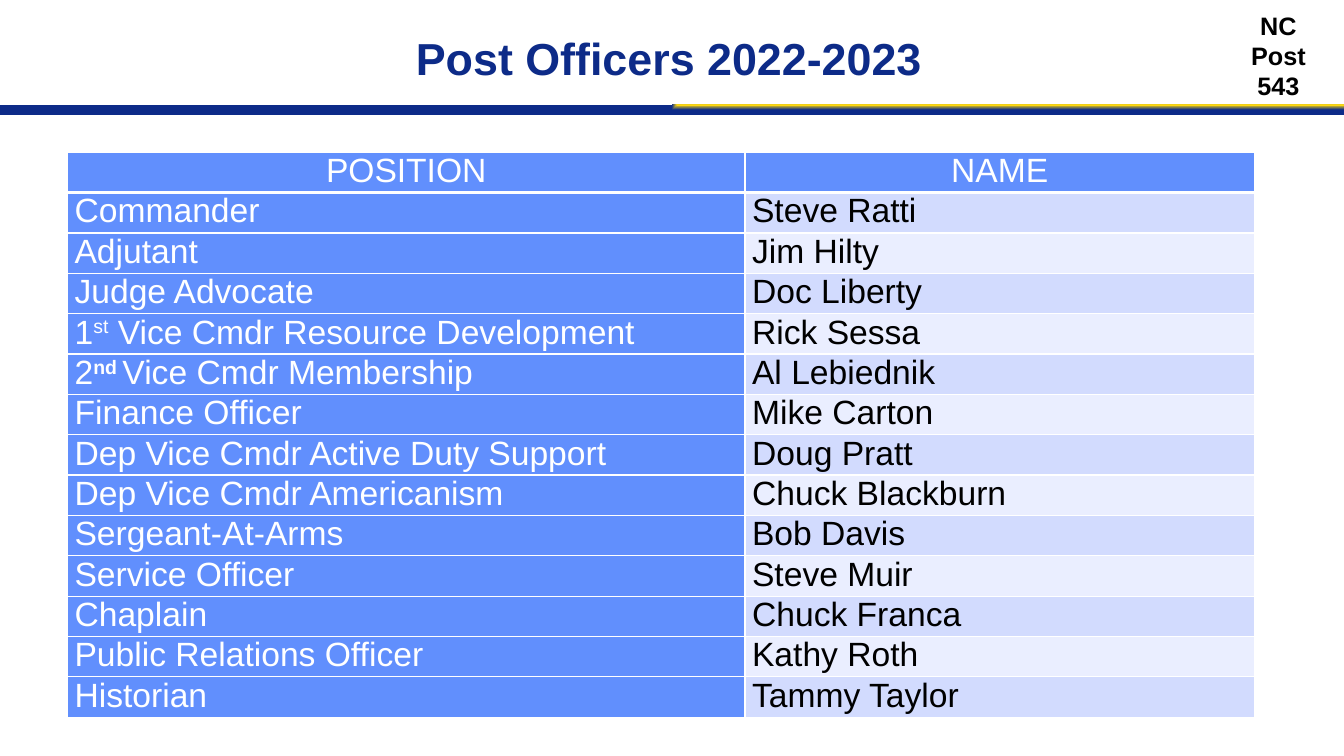
from lxml import etree
from pptx import Presentation
from pptx import util as u
from pptx.dml.color import RGBColor
from pptx.enum import shapes, text
from pptx.oxml.ns import qn

FONT = "Arial"
NAVY, GOLD, WHITE, BLACK = "0D2B88", "FED910", "FFFFFF", "000000"
BLUE, BAND_DARK, BAND_LIGHT = "618FFD", "D2DBFE", "EAEEFF"

# A position is a string, or a list of (text, style) runs.
OFFICERS = [
    ("Commander", "Steve Ratti"),
    ("Adjutant", "Jim Hilty"),
    ("Judge Advocate", "Doc Liberty"),
    ([("1", {}), ("st", {"raised": True}),
      (" Vice Cmdr Resource Development", {})], "Rick Sessa"),
    ([("2", {}), ("nd ", {"raised": True, "bold": True}),
      ("Vice Cmdr Membership", {})], "Al Lebiednik"),
    ("Finance Officer", "Mike Carton"),
    ("Dep Vice Cmdr Active Duty Support", "Doug Pratt"),
    ("Dep Vice Cmdr Americanism", "Chuck Blackburn"),
    ("Sergeant-At-Arms", "Bob Davis"),
    ("Service Officer", "Steve Muir"),
    ("Chaplain", "Chuck Franca"),
    ("Public Relations Officer", "Kathy Roth"),
    ("Historian", "Tammy Taylor"),
]


def rgb(value):
    return RGBColor.from_string(value)


def inches(*lengths):
    return [u.Inches(length) for length in lengths]


def add_run(para, words, size, color, bold=False, raised=False):
    span = para.add_run()
    span.text = words
    span.font.name = FONT
    span.font.size = u.Pt(size)
    span.font.bold = bold
    span.font.color.rgb = rgb(color)
    if raised:
        span.font._element.set("baseline", "30000")


def add_label(page, place, words, size, color, margins, spacing=1.0):
    """Add a bold, centred text box; margins run left, top, right, bottom."""
    box = page.shapes.add_textbox(*inches(*place))
    frame = box.text_frame
    frame.word_wrap = True
    (frame.margin_left, frame.margin_top,
     frame.margin_right, frame.margin_bottom) = inches(*margins)
    para = frame.paragraphs[0]
    para.alignment = text.PP_ALIGN.CENTER
    para.line_spacing = spacing
    add_run(para, words, size, color, bold=True)
    return frame


def add_header_bar(page):
    """Add the navy bar whose gold glow starts at its top right corner."""
    bar = page.shapes.add_shape(shapes.MSO_SHAPE.RECTANGLE,
                                *inches(0, 1.04, 13.33, 0.1))
    bar.shadow.inherit = False
    bar.line.fill.background()
    bar.fill.gradient()
    for stop, color, position in zip(bar.fill.gradient_stops, (GOLD, NAVY), (0, 1)):
        stop.color.rgb = rgb(color)
        stop.position = position
    linear = bar._element.spPr.find(".//" + qn("a:lin"))
    glow = etree.Element(qn("a:path"), {"path": "rect"})
    etree.SubElement(glow, qn("a:fillToRect"), {"l": "100000", "b": "100000"})
    linear.getparent().replace(linear, glow)


def add_borders(cell, bottom):
    properties = cell._tc.get_or_add_tcPr()
    for side, points in (("L", 1), ("R", 1), ("T", 1), ("B", bottom)):
        line = etree.SubElement(properties, qn("a:ln" + side), {"w": str(u.Pt(points))})
        fill = etree.SubElement(line, qn("a:solidFill"))
        etree.SubElement(fill, qn("a:srgbClr"), {"val": WHITE})


def fill_cell(cell, content, fill, color, align, bottom=1):
    add_borders(cell, bottom)
    cell.fill.solid()
    cell.fill.fore_color.rgb = rgb(fill)
    cell.margin_left = cell.margin_right = u.Inches(0.07)
    cell.margin_top = cell.margin_bottom = 0
    para = cell.text_frame.paragraphs[0]
    para.alignment = align
    runs = [(content, {})] if isinstance(content, str) else content
    for words, style in runs:
        add_run(para, words, 24, color, **style)


def add_officer_table(page):
    count = len(OFFICERS) + 1
    table = page.shapes.add_table(count, 2, *inches(0.67, 1.51, 11.77, 5.51)).table
    table.first_row = table.horz_banding = False
    for column, width in zip(table.columns, inches(6.72, 5.05)):
        column.width = width
    for row in table.rows:
        row.height = u.Inches(5.51 / count)
    for column, heading in enumerate(("POSITION", "NAME")):
        fill_cell(table.cell(0, column), heading, BLUE, WHITE,
                  text.PP_ALIGN.CENTER, bottom=3)
    for row, (position, name) in enumerate(OFFICERS, 1):
        band = BAND_DARK if row % 2 else BAND_LIGHT
        fill_cell(table.cell(row, 0), position, BLUE, WHITE, text.PP_ALIGN.LEFT)
        fill_cell(table.cell(row, 1), name, band, BLACK, text.PP_ALIGN.LEFT)


def main():
    deck = Presentation()
    deck.slide_width, deck.slide_height = inches(13.33, 7.5)
    page = deck.slides.add_slide(deck.slide_layouts[6])
    add_header_bar(page)
    post = add_label(page, (12.15, 0.05, 1.06, 1.01), "NC Post 543", 18, BLACK,
                     (0.1, 0.05, 0.1, 0.05))
    post.auto_size = text.MSO_AUTO_SIZE.SHAPE_TO_FIT_TEXT
    title = add_label(page, (1.44, 0.2, 10.44, 0.84), "Post Officers 2022-2023", 32,
                      NAVY, (0.05, 0.05, 0.1, 0.05), spacing=0.8)
    title.vertical_anchor = text.MSO_ANCHOR.MIDDLE
    add_officer_table(page)
    deck.save("out.pptx")


if __name__ == "__main__":
    main()
